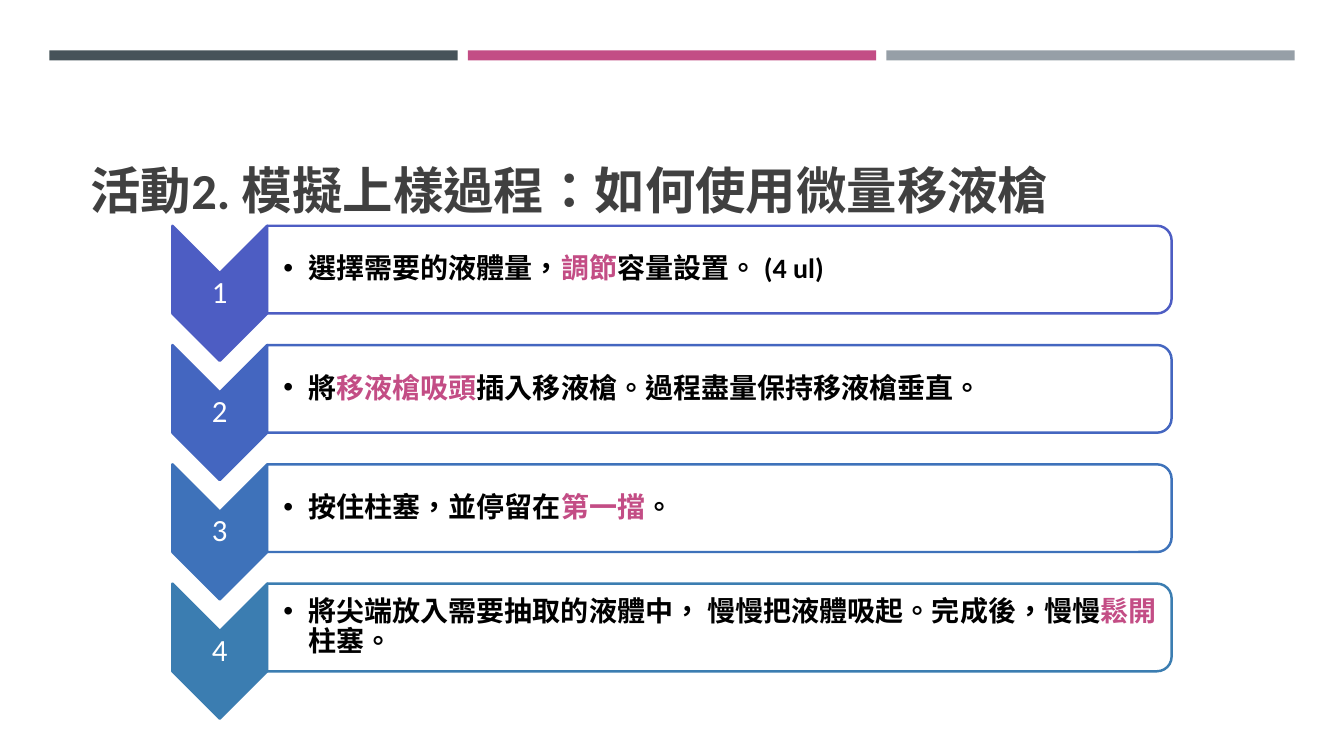
from pptx import Presentation
from pptx.dml.color import RGBColor
from pptx.enum.lang import MSO_LANGUAGE_ID as Lang
from pptx.enum.shapes import MSO_SHAPE as Shape
from pptx.enum.text import MSO_ANCHOR as Anchor, PP_ALIGN as Align
from pptx.oxml.ns import qn
from pptx.util import Inches, Pt
from lxml.etree import SubElement

SLATE = RGBColor(0x46, 0x53, 0x59)
PINK = RGBColor(0xC3, 0x4D, 0x85)
GREY = RGBColor(0x96, 0x9F, 0xA7)
DARK = RGBColor(0x40, 0x40, 0x40)
BLACK = RGBColor(0, 0, 0)
WHITE = RGBColor(0xFF, 0xFF, 0xFF)
INDIGO = RGBColor(0x4D, 0x5D, 0xC3)
BLUE = RGBColor(0x44, 0x66, 0xC0)
AZURE = RGBColor(0x3E, 0x72, 0xBA)
TEAL = RGBColor(0x3B, 0x7D, 0xB1)

TITLE = {"size": Pt(36), "bold": True}
NUMBER = {"size": Pt(22)}
BODY = {"size": Pt(20), "bold": True}

# Each step: colour, then runs of text, colour and (if not Calibri) font
STEPS = [
    (INDIGO, [("選擇需要的液體量，", BLACK), ("調節", PINK),
              ("容量設置。 (4 ul)", BLACK)]),
    (BLUE, [("將", BLACK), ("移液", PINK), ("槍", PINK, "Arial"),
            ("吸頭", PINK), ("插入移液槍。過程盡量保持移液槍垂直。", BLACK)]),
    (AZURE, [("按住柱塞，並停留在", BLACK), ("第一擋", PINK), ("。", BLACK)]),
    (TEAL, [("將尖端放入需要抽取的液體中， 慢慢把液體吸起。完成後，慢慢", BLACK),
            ("鬆開", PINK), ("柱塞。", BLACK)]),
]
PITCH = 3.55 / (len(STEPS) - 1)


def add_block(slide, kind, box, fill, line=None, turn=0):
    block = slide.shapes.add_shape(kind, *map(Inches, box))
    block.shadow.inherit = False
    block.rotation = turn
    block.fill.solid()
    block.fill.fore_color.rgb = fill
    if line is None:
        block.line.fill.background()
    else:
        block.line.color.rgb = line
        block.line.width = Pt(1.75)
    return block


def fade(block, percent):
    """Set the opacity of a solid fill."""
    color = block.fill._xPr.find(qn("a:solidFill"))[0]
    SubElement(color, qn("a:alpha"), val=str(percent * 1000))


def add_bullet(para, indent):
    props = para._p.get_or_add_pPr()
    props.set("marL", str(Inches(indent)))
    props.set("indent", str(-Inches(indent)))
    SubElement(props, qn("a:buFont"), typeface="Arial")
    SubElement(props, qn("a:buChar"), char="•")


def add_text(slide, box, runs, style, anchor, insets=None):
    """Add a one-paragraph text box and return its paragraph."""
    frame = slide.shapes.add_textbox(*map(Inches, box)).text_frame
    frame.word_wrap = True
    frame.vertical_anchor = anchor
    if insets:
        for side, inset in zip(("left", "top", "right", "bottom"), insets):
            setattr(frame, f"margin_{side}", Inches(inset))
    para = frame.paragraphs[0]
    for text, color, *face in runs:
        run = para.add_run()
        run.text = text
        name = face[0] if face else "Calibri"
        look = {"name": name, "language_id": Lang.TRADITIONAL_CHINESE, **style}
        for key, value in look.items():
            setattr(run.font, key, value)
        run.font.color.rgb = color
    return para


def add_step(slide, index, color, runs):
    shift = index * PITCH
    add_block(slide, Shape.CHEVRON, (1.51, 2.44 + shift, 1.34, 0.94),
              color, color, 90)
    label = add_text(slide, (1.71, 2.71 + shift, 0.94, 0.4),
                     [(str(index + 1), WHITE)], NUMBER, Anchor.MIDDLE,
                     [0.02] * 4)
    label.alignment = Align.CENTER
    label.line_spacing = 0.9
    panel = add_block(slide, Shape.ROUND_2_SAME_RECTANGLE,
                      (6.7, -1.81 + shift, 0.87, 8.97), WHITE, color, 90)
    fade(panel, 90)
    para = add_text(slide, (2.65, 2.28 + shift, 8.92, 0.79), runs, BODY,
                    Anchor.MIDDLE, (0.16, 0.01, 0.01, 0.01))
    para.line_spacing = 0.9
    add_bullet(para, 0.25)


def main():
    deck = Presentation()
    deck.slide_width, deck.slide_height = Inches(13.33), Inches(7.5)
    slide = deck.slides.add_slide(deck.slide_layouts[6])
    for index, color in enumerate((SLATE, PINK, GREY)):
        add_block(slide, Shape.RECTANGLE,
                  (0.49 + index * 4.15, 0.5, 4.05, 0.1), color)
    for index, (color, runs) in enumerate(STEPS):
        add_step(slide, index, color, runs)
    add_text(slide, (0.8, 0.93, 12.06, 1.3),
             [("活動2. 模擬上樣過程：如何使用微量移液槍", DARK)],
             TITLE, Anchor.BOTTOM)
    deck.save("out.pptx")


if __name__ == "__main__":
    main()
